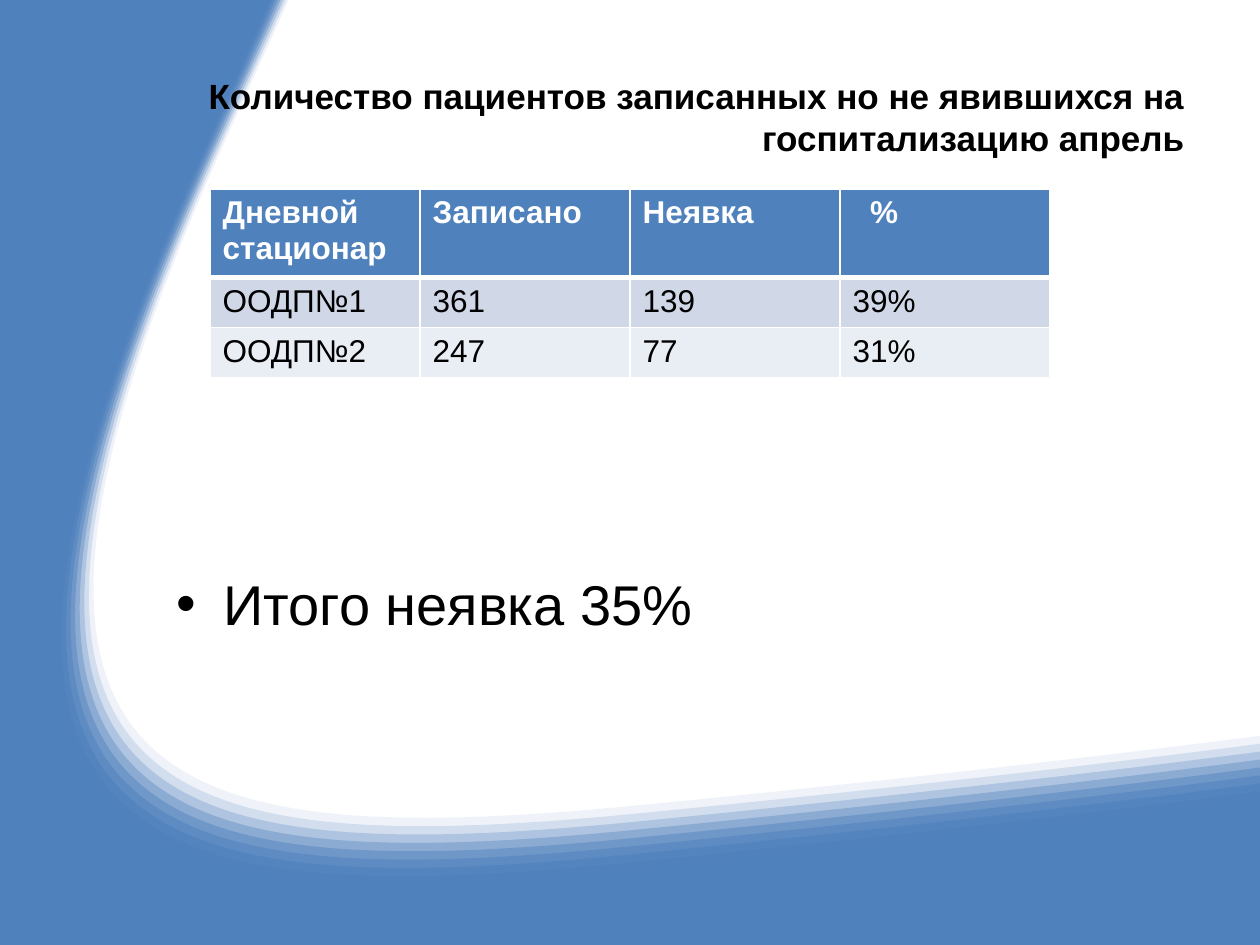
from dataclasses import dataclass
from lxml.etree import SubElement
from pptx import Presentation
from pptx.dml.color import RGBColor
from pptx.enum.text import MSO_ANCHOR, PP_ALIGN
from pptx.oxml.ns import qn
from pptx.util import Pt

COLORS = {"blue": "4F81BD", "white": "FFFFFF", "black": "000000",
          "band1": "D0D8E8", "band2": "E9EDF4"}
WIDTH, HEIGHT = 720, 540
BANDS = 11

BASE = [(720, 472.3), (720, 472.3), (580.3, 491), (353.5, 514.1), (57.6, 543.6),
        (-87.1, 512.6), (105.8, 82.8), (129.6, 29.5), (143.3, 0), (143.3, 0)]
WIDEST = [(720, 420.5), (718.6, 420.5), (586, 438.5), (373, 459.4), (87.1, 488.2),
          (-39.6, 455), (129.6, 78.5), (151.9, 28.8), (164.9, 0.7), (164.9, 0)]
NARROWEST = [(720, 465.8), (701.3, 468.7), (565.9, 486), (358.6, 506.9), (66.2, 536.4),
             (-77, 506.2), (113.8, 82.1), (133.9, 37.4), (146.2, 7.9), (149.8, 0)]


@dataclass
class TextBlock:
    text: str
    box: tuple
    size: float
    bold: bool
    frame: dict
    para: dict
    bullet: float = 0


@dataclass
class Row:
    cells: tuple
    height: float
    fill: str
    color: str
    bold: bool
    bottom: float


def rgb(name: str) -> RGBColor:
    return RGBColor.from_string(COLORS[name])


def apply(obj, values: dict) -> None:
    for key, value in values.items():
        setattr(obj, key, value)


def blend(a: list, b: list, t: float) -> list:
    return [(x + (u - x) * t, y + (v - y) * t) for (x, y), (u, v) in zip(a, b)]


def line_to(pts: list) -> list:
    return [("lnTo", [pt]) for pt in pts]


def curve_to(pts: list) -> list:
    return [("cubicBezTo", pts[i:i + 3]) for i in range(1, len(pts), 3)]


def add_area(s, start: tuple, steps: list, opacity: float = 1) -> None:
    fb = s.shapes.build_freeform(0, 0)
    fb.add_line_segments([(Pt(WIDTH), 0), (Pt(WIDTH), Pt(HEIGHT)), (0, Pt(HEIGHT))])
    sp = fb.convert_to_shape()
    outline = sp._element.find(".//" + qn("a:path"))
    for child in list(outline):
        outline.remove(child)
    for tag, pts in [("moveTo", [start]), *steps, ("close", [])]:
        step = SubElement(outline, qn("a:" + tag))
        for x, y in pts:
            SubElement(step, qn("a:pt"), x=str(Pt(x)), y=str(Pt(y)))
    sp.shadow.inherit = False
    sp.fill.solid()
    sp.fill.fore_color.rgb = rgb("blue")
    sp.line.fill.background()
    if opacity < 1:
        clr = sp._element.spPr.find(qn("a:solidFill")).find(qn("a:srgbClr"))
        SubElement(clr, qn("a:alpha"), val=str(round(opacity * 100000)))


def add_run(p, text: str, size: float, bold: bool, color: str) -> None:
    r = p.add_run()
    r.text = text
    apply(r.font, {"name": "Arial", "size": Pt(size), "bold": bold})
    r.font.color.rgb = rgb(color)


def add_text(s, block: TextBlock) -> None:
    tf = s.shapes.add_textbox(*map(Pt, block.box)).text_frame
    apply(tf, {"word_wrap": True, **block.frame})
    p = tf.paragraphs[0]
    apply(p, block.para)
    add_run(p, block.text, block.size, block.bold, "black")
    if block.bullet:
        pPr = p._p.get_or_add_pPr()
        pPr.set("marL", str(Pt(block.bullet)))
        pPr.set("indent", str(-Pt(block.bullet)))
        SubElement(pPr, qn("a:buFont"), typeface="Arial")
        SubElement(pPr, qn("a:buChar"), char="•")


def add_border(cell, side: str, width: float) -> None:
    ln = SubElement(cell._tc.get_or_add_tcPr(), qn("a:" + side), w=str(Pt(width)))
    fill = SubElement(ln, qn("a:solidFill"))
    SubElement(fill, qn("a:srgbClr"), val=COLORS["white"])


def add_table(s, rows: list, left: float, top: float, col_width: float) -> None:
    n = len(rows[0].cells)
    height = sum(row.height for row in rows)
    tbl = s.shapes.add_table(len(rows), n, Pt(left), Pt(top),
                             Pt(n * col_width), Pt(height)).table
    for col in tbl.columns:
        col.width = Pt(col_width)
    above = 1
    for i, row in enumerate(rows):
        tbl.rows[i].height = Pt(row.height)
        for cell, text in zip(tbl.rows[i].cells, row.cells):
            borders = {"lnL": 1, "lnR": 1, "lnT": above, "lnB": row.bottom}
            for side, width in borders.items():
                add_border(cell, side, width)
            cell.fill.solid()
            cell.fill.fore_color.rgb = rgb(row.fill)
            p = cell.text_frame.paragraphs[0]
            if text == "%":
                p._p.get_or_add_pPr().set("marL", str(Pt(10)))
            add_run(p, text, 18, row.bold, row.color)
        above = row.bottom


TEXTS = [
    TextBlock("Количество пациентов записанных но не явившихся на госпитализацию апрель",
              (93.6, 21.6, 590.4, 90), 20, True,
              {"vertical_anchor": MSO_ANCHOR.MIDDLE}, {"alignment": PP_ALIGN.RIGHT}),
    TextBlock("Итого неявка 35%", (93.6, 126, 590.4, 356.4), 32, False,
              {"vertical_anchor": MSO_ANCHOR.TOP, "margin_top": Pt(199.4)},
              {"alignment": PP_ALIGN.LEFT}, bullet=27),
]
ROWS = [
    Row(("Дневной стационар", "Записано", "Неявка", "%"), 46.8, "blue", "white", True, 3),
    Row(("ООДП№1", "361", "139", "39%"), 28.8, "band1", "black", False, 1),
    Row(("ООДП№2", "247", "77", "31%"), 28.8, "band2", "black", False, 1),
]


def main() -> None:
    prs = Presentation()
    apply(prs, {"slide_width": Pt(WIDTH), "slide_height": Pt(HEIGHT)})
    s = prs.slides.add_slide(prs.slide_layouts[6])
    corners = [(0, 0), (0, HEIGHT), (WIDTH, HEIGHT)]
    add_area(s, BASE[0], curve_to(BASE) + line_to(corners))
    back = BASE[::-1]
    for i in range(BANDS):
        edge = blend(WIDEST, NARROWEST, i / (BANDS - 1))
        steps = curve_to(edge) + line_to(back[:1]) + curve_to(back)
        add_area(s, edge[0], steps, (i + 1) / BANDS)
    for block in TEXTS:
        add_text(s, block)
    add_table(s, ROWS, 120, 108, 120)
    prs.save("out.pptx")


if __name__ == "__main__":
    main()
